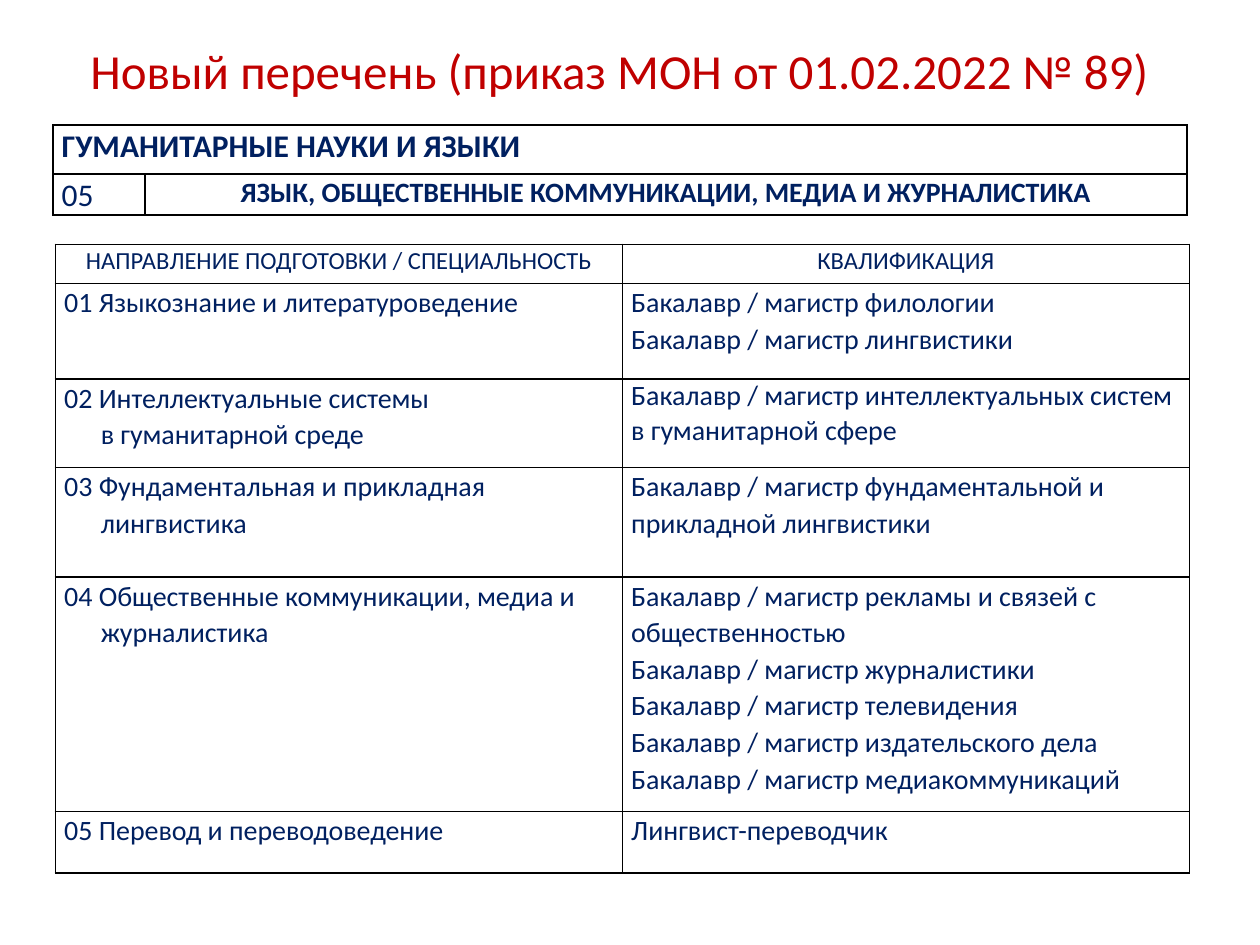
from lxml import etree
from pptx import Presentation
from pptx import util as u
from pptx.dml.color import RGBColor
from pptx.enum import text
from pptx.oxml import ns

NAVY = RGBColor(0x00, 0x20, 0x60)
RED = RGBColor(0xC0, 0x00, 0x00)
BLACK = RGBColor(0x00, 0x00, 0x00)
MID = text.PP_ALIGN.CENTER
LEFT = text.PP_ALIGN.LEFT
COLS, ROWS = 100, 75
HANG = 2.9


class Deck:
    font = "Calibri"

    def __init__(self):
        self.prs = Presentation()
        self.prs.slide_width = u.Inches(10)
        self.prs.slide_height = u.Inches(7.5)
        self.slide = self.prs.slides.add_slide(self.prs.slide_layouts[6])

    def x(self, cols):
        return round(self.prs.slide_width * cols / COLS)

    def y(self, rows):
        return round(self.prs.slide_height * rows / ROWS)

    def label(self, frame, words, size, color=NAVY, bold=False, align=LEFT,
              line=None, before=0, after=0, hang=None):
        frame.text = words
        frame.word_wrap = True
        for par in frame.paragraphs:
            par.alignment = align
            par.line_spacing = line
            par.space_before = u.Pt(before)
            par.space_after = u.Pt(after)
            for run in par.runs:
                run.font.name = self.font
                run.font.size = u.Pt(size)
                run.font.bold = bold
                run.font.color.rgb = color
        if hang:
            last = frame.paragraphs[-1]._p.get_or_add_pPr()
            last.set("marL", str(self.x(hang)))
            if len(frame.paragraphs) == 1:
                last.set("indent", str(-self.x(hang)))

    def title(self, left, top, wide, high, words):
        box = self.slide.shapes.add_textbox(
            self.x(left), self.y(top), self.x(wide), self.y(high))
        self.label(box.text_frame, words, 28, RED, align=MID)

    def border(self, cell):
        props = cell._tc.get_or_add_tcPr()
        for side in ("lnL", "lnR", "lnT", "lnB"):
            edge = etree.SubElement(props, ns.qn(f"a:{side}"), w=str(u.Pt(1)))
            fill = etree.SubElement(edge, ns.qn("a:solidFill"))
            etree.SubElement(fill, ns.qn("a:srgbClr"), val=str(BLACK))

    def table(self, left, top, wides, highs):
        grid = self.slide.shapes.add_table(
            len(highs), len(wides), self.x(left), self.y(top),
            self.x(sum(wides)), self.y(sum(highs))).table
        grid.first_row = grid.horz_banding = False
        for col, wide in zip(grid.columns, wides):
            col.width = self.x(wide)
        for row, high in zip(grid.rows, highs):
            row.height = self.y(high)
        for cell in grid.iter_cells():
            self.border(cell)
            cell.fill.background()
            cell.margin_left = cell.margin_right = u.Inches(0.07)
            cell.margin_top = cell.margin_bottom = 0
        return grid

    def cell(self, grid, row, col, words, size=16, line=1.07, **style):
        self.label(grid.cell(row, col).text_frame, words, size,
                   line=line, **style)


FIELDS = [
    ("01 Языкознание и литературоведение", {},
     "Бакалавр / магистр филологии\nБакалавр / магистр лингвистики", {}),
    ("02 Интеллектуальные системы\nв гуманитарной среде", {"hang": HANG},
     "Бакалавр / магистр интеллектуальных систем в гуманитарной сфере",
     {"line": None}),
    ("03 Фундаментальная и прикладная лингвистика", {"hang": HANG},
     "Бакалавр / магистр фундаментальной и прикладной лингвистики", {}),
    ("04 Общественные коммуникации, медиа и журналистика", {"hang": HANG},
     "Бакалавр / магистр рекламы и связей с общественностью\n"
     "Бакалавр / магистр журналистики\n"
     "Бакалавр / магистр телевидения\n"
     "Бакалавр / магистр издательского дела\n"
     "Бакалавр / магистр медиакоммуникаций", {}),
    ("05 Перевод и переводоведение", {}, "Лингвист-переводчик", {}),
]


def main():
    deck = Deck()
    head = deck.table(4.2, 9.9, [7.3, 82.7], [3.9, 3.2])
    head.cell(0, 0).merge(head.cell(0, 1))
    deck.cell(head, 0, 0, "ГУМАНИТАРНЫЕ НАУКИ И ЯЗЫКИ", 18, bold=True,
              before=6, after=6)
    deck.cell(head, 1, 0, "05", 18)
    deck.cell(head, 1, 1,
              "ЯЗЫК, ОБЩЕСТВЕННЫЕ КОММУНИКАЦИИ, МЕДИА И ЖУРНАЛИСТИКА",
              bold=True, align=MID, after=6)

    plan = deck.table(4.4, 19.4, [45, 45], [3.1, 7.6, 7, 8.7, 18.6, 4.9])
    names = ("НАПРАВЛЕНИЕ ПОДГОТОВКИ / СПЕЦИАЛЬНОСТЬ", "КВАЛИФИКАЦИЯ")
    for col, name in enumerate(names):
        deck.cell(plan, 0, col, name, 14, align=MID)
    for row, (field, left, degree, right) in enumerate(FIELDS, 1):
        deck.cell(plan, row, 0, field, **left)
        deck.cell(plan, row, 1, degree, **right)

    deck.title(4.9, 2.7, 88.5, 5.7,
               "Новый перечень (приказ МОН от 01.02.2022 № 89)")
    deck.prs.save("out.pptx")


if __name__ == "__main__":
    main()
